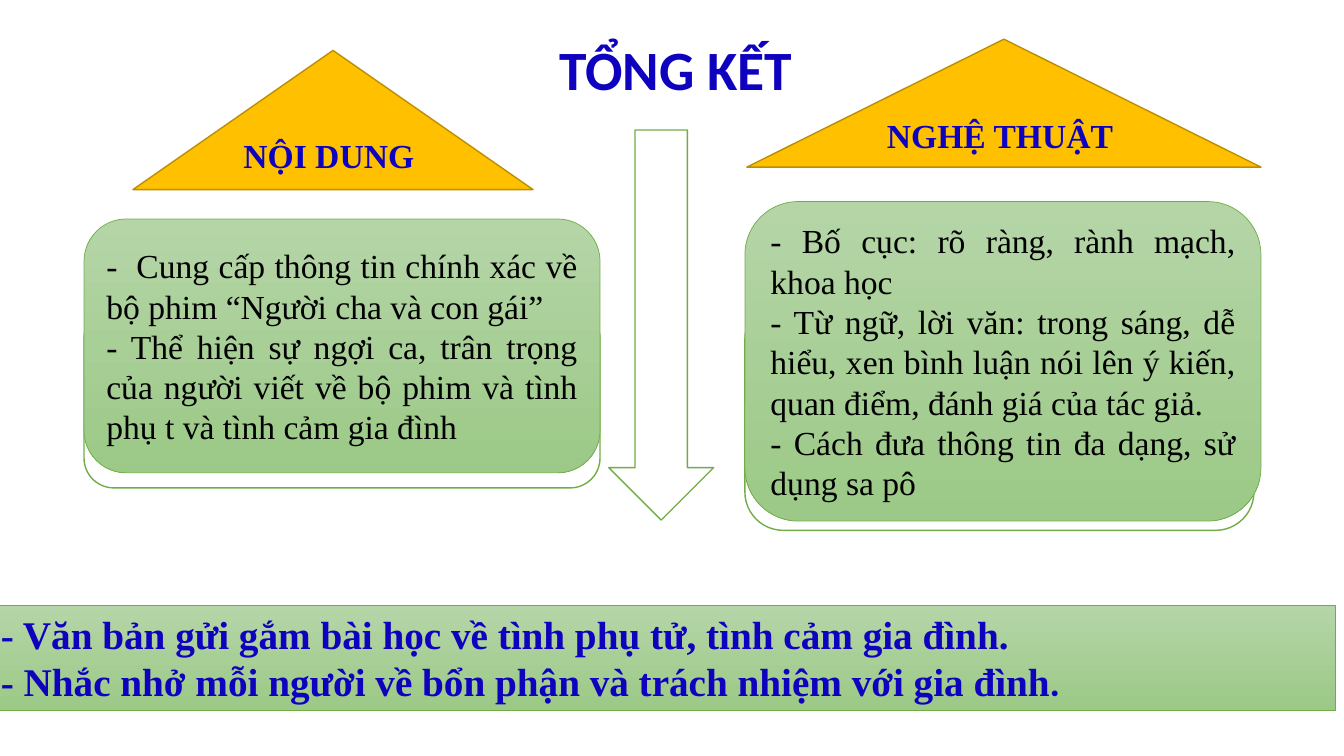
from pptx import Presentation
from pptx.dml.color import RGBColor
from pptx.enum.shapes import MSO_SHAPE
from pptx.enum.text import MSO_ANCHOR, PP_ALIGN
from pptx.util import Pt

BLUE, BLACK, WHITE = "0F02BE", "000000", "FFFFFF"
GREEN, GOLD, DARK_GOLD = "70AD47", "FFC000", "BD8E00"
LIGHT_GREEN, MID_GREEN = "B5D5A7", "9CC987"
SERIF = "Times New Roman"


def add_box(kind, place, fill, line, line_width):
    """Add a shape; a pair of fill colours gives a top-to-bottom gradient."""
    shape = slide.shapes.add_shape(kind, *[Pt(value) for value in place])
    shape.shadow.inherit = False
    if isinstance(fill, tuple):
        shape.fill.gradient()
        shape.fill.gradient_angle = 270
        for stop, color in zip(shape.fill.gradient_stops, fill):
            stop.color.rgb = RGBColor.from_string(color)
    else:
        shape.fill.solid()
        shape.fill.fore_color.rgb = RGBColor.from_string(fill)
    shape.line.color.rgb = RGBColor.from_string(line)
    shape.line.width = Pt(line_width)
    return shape


def write(shape, lines, size, color, bold, align, anchor=MSO_ANCHOR.MIDDLE, font=SERIF):
    text_frame = shape.text_frame
    text_frame.text = "\n".join(lines)
    text_frame.word_wrap = True
    text_frame.vertical_anchor = anchor
    for paragraph in text_frame.paragraphs:
        paragraph.alignment = align
        for run in paragraph.runs:
            run.font.name = font
            run.font.size = Pt(size)
            run.font.bold = bold
            run.font.color.rgb = RGBColor.from_string(color)


presentation = Presentation()
presentation.slide_width, presentation.slide_height = Pt(960), Pt(540)
slide = presentation.slides.add_slide(presentation.slide_layouts[5])

# Title
title = slide.shapes.title
title.left, title.top, title.width, title.height = Pt(131.8), Pt(28), Pt(710.6), Pt(47.5)
write(title, ["TỔNG KẾT "], 39.6, BLUE, True, PP_ALIGN.CENTER, font="Calibri")
title.text_frame.paragraphs[0].line_spacing = 0.9

# Two columns: white backing, green card and triangular heading
columns = [
    (MSO_SHAPE.FLOWCHART_ALTERNATE_PROCESS, (60, 220.3, 368.6, 128.2),
     (60, 156.4, 368.6, 181.4), (95, 36, 285.8, 99.4), "NỘI DUNG ",
     ["-  Cung cấp thông tin chính xác về bộ phim “Người cha và con gái”",
      "- Thể hiện sự ngợi ca, trân trọng của người viết về bộ phim và tình "
      "phụ t và tình cảm gia đình "]),
    (MSO_SHAPE.ROUNDED_RECTANGLE, (532.1, 214.6, 363.6, 164.2),
     (532.1, 144, 368.6, 228.2), (533.5, 28, 367.2, 91.4), "NGHỆ THUẬT ",
     ["- Bố cục: rõ ràng, rành mạch, khoa học",
      "- Từ ngữ, lời văn: trong sáng, dễ hiểu, xen bình luận nói lên ý kiến, "
      "quan điểm, đánh giá của tác giả.",
      "- Cách đưa thông tin đa dạng, sử dụng sa pô"]),
]
for backing_kind, backing_place, card_place, heading_place, heading_text, points in columns:
    add_box(backing_kind, backing_place, WHITE, GREEN, 1)
    card = add_box(MSO_SHAPE.FLOWCHART_ALTERNATE_PROCESS, card_place,
                   (LIGHT_GREEN, MID_GREEN), GREEN, 0.5)
    write(card, points, 24, BLACK, False, PP_ALIGN.JUSTIFY)
    heading = add_box(MSO_SHAPE.ISOSCELES_TRIANGLE, heading_place, GOLD, DARK_GOLD, 1)
    write(heading, [heading_text], 24, BLUE, True, PP_ALIGN.CENTER)

# Arrow down to the conclusion
add_box(MSO_SHAPE.DOWN_ARROW, (434.9, 92.9, 74.9, 278.6), WHITE, GREEN, 1)

# Conclusion bar
conclusion = add_box(MSO_SHAPE.RECTANGLE, (-6.5, 432.7, 960, 74.9),
                     (LIGHT_GREEN, MID_GREEN), GREEN, 0.5)
write(conclusion,
      ["- Văn bản gửi gắm bài học về tình phụ tử, tình cảm gia đình.",
       "- Nhắc nhở mỗi người về bổn phận và trách nhiệm với gia đình"],
      28, BLUE, True, PP_ALIGN.LEFT, MSO_ANCHOR.TOP)
full_stop = conclusion.text_frame.paragraphs[1].add_run()
full_stop.text = "."
full_stop.font.name = "Calibri"
full_stop.font.size = Pt(28)
full_stop.font.bold = True
full_stop.font.color.rgb = RGBColor.from_string(BLUE)

presentation.save("out.pptx")
